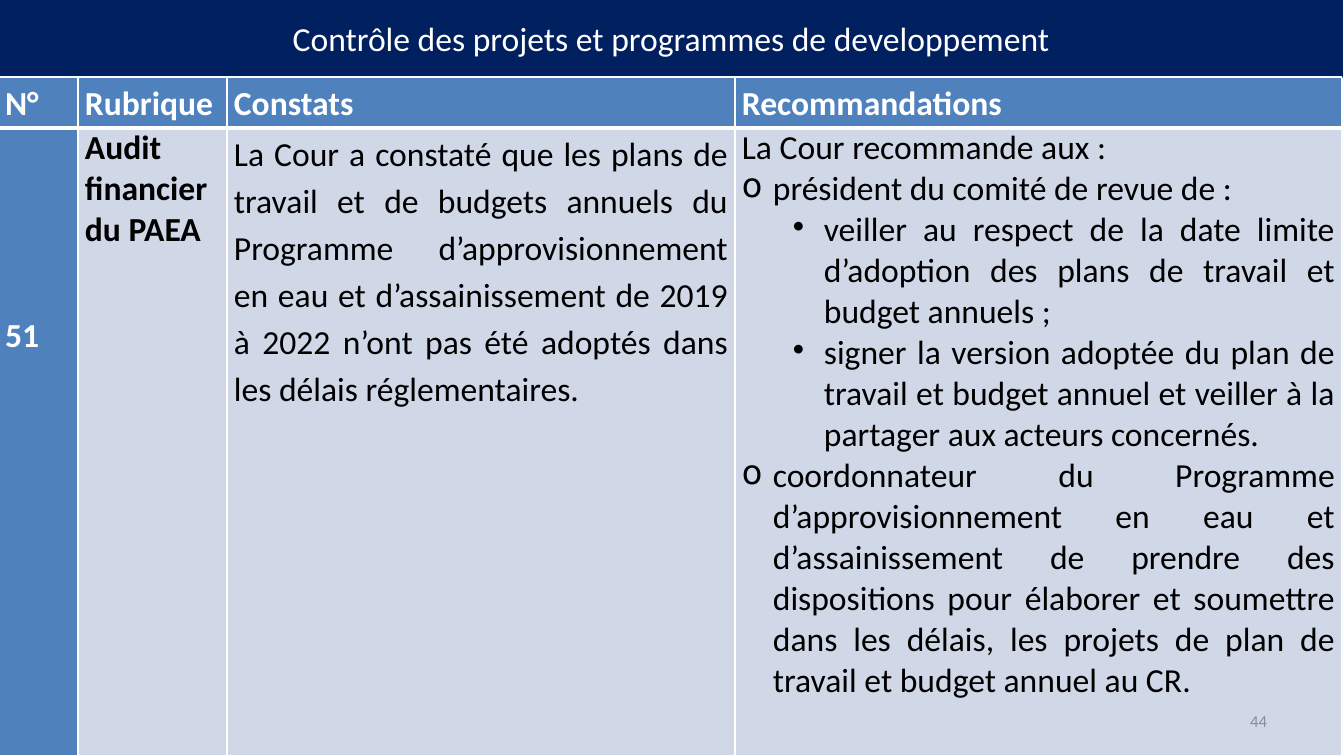
from lxml.etree import SubElement
from pptx import Presentation
from pptx.dml.color import RGBColor
from pptx.enum.text import MSO_ANCHOR as Anchor, MSO_AUTO_SIZE as AutoSize, PP_ALIGN as Align
from pptx.oxml import parse_xml
from pptx.oxml.ns import nsdecls, qn
from pptx.util import Pt

PX = 914400 / 100.8
NAVY, BLUE, PALE, WHITE, BLACK, GREY = "002060", "4F81BD", "D0D8E8", "FFFFFF", "000000", "8C8C8C"

COLUMN_WIDTHS = [80, 149, 508, 607]
ROW_HEIGHTS = [51, 628]
HEADINGS = ["N°", "Rubrique", "Constats", "Recommandations"]
FINDING = (
    "La Cour a constaté que les plans de travail et de budgets annuels du Programme "
    "d’approvisionnement en eau et d’assainissement de 2019 à 2022 n’ont pas été adoptés "
    "dans les délais réglementaires."
)
# Each entry: text, bullet, left indent in px
RECOMMENDATIONS = [
    ("La Cour recommande aux :", None, 0),
    ("président du comité de revue de :", "o", 31),
    ("veiller au respect de la date limite d’adoption des plans de travail et budget annuels ;", "•", 82),
    ("signer la version adoptée du plan de travail et budget annuel et veiller à la partager "
     "aux acteurs concernés.", "•", 82),
    ("coordonnateur du Programme d’approvisionnement en eau et d’assainissement de prendre des "
     "dispositions pour élaborer et soumettre dans les délais, les projets de plan de travail "
     "et budget annuel au CR.", "o", 31),
]


def px(length):
    return round(length * PX)


def color(value):
    return RGBColor.from_string(value)


def assign(target, values):
    for name, value in values.items():
        setattr(target, name, value)


def place(shape, left, top, width, height):
    assign(shape, {"left": px(left), "top": px(top), "width": px(width), "height": px(height)})


class SlideBuilder:
    """Holds the text style and the slide being filled."""

    font = "Calibri"
    bullet_hang = 31

    def __init__(self, presentation):
        self.slide = presentation.slides.add_slide(presentation.slide_layouts[5])

    def add_words(self, paragraph, text, ink, size=24, bold=False, align=Align.JUSTIFY, spacing=1.0):
        assign(paragraph, {"alignment": align, "line_spacing": spacing})
        run = paragraph.add_run()
        run.text = text
        assign(run.font, {"name": self.font, "size": Pt(size), "bold": bold})
        run.font.color.rgb = color(ink)

    def bullet(self, paragraph, symbol, indent):
        properties = paragraph._p.get_or_add_pPr()
        properties.set("marL", str(px(indent)))
        properties.set("indent", str(-px(self.bullet_hang)))
        SubElement(properties, qn("a:buChar")).set("char", symbol)

    def title(self, text, box):
        title = self.slide.shapes.title
        place(title, *box)
        title.fill.solid()
        title.fill.fore_color.rgb = color(NAVY)
        title.line.color.rgb = color(NAVY)
        title.line.width = Pt(2)
        assign(title.text_frame, {"vertical_anchor": Anchor.MIDDLE, "auto_size": AutoSize.NONE})
        self.add_words(title.text_frame.paragraphs[0], text, WHITE, align=Align.CENTER)

    def text(self, text, box, ink, size, align):
        text_box = self.slide.shapes.add_textbox(*map(px, box))
        assign(text_box.text_frame, {"word_wrap": True, "vertical_anchor": Anchor.MIDDLE})
        self.add_words(text_box.text_frame.paragraphs[0], text, ink, size, align=align)

    def table(self, left, top, widths, heights):
        box = map(px, (left, top, sum(widths), sum(heights)))
        table = self.slide.shapes.add_table(len(heights), len(widths), *box).table
        assign(table, {"first_row": False, "horz_banding": False})
        for column, width in zip(table.columns, widths):
            column.width = px(width)
        for row, height in zip(table.rows, heights):
            row.height = px(height)
        return table

    def cell(self, cell, fill, borders, top_margin=0):
        """Set fill, margins and white borders; borders maps a side to its width in points."""
        cell.fill.solid()
        cell.fill.fore_color.rgb = color(fill)
        assign(cell, {"margin_left": px(7), "margin_right": px(7),
                      "margin_top": px(top_margin), "margin_bottom": 0})
        properties = cell._tc.get_or_add_tcPr()
        for position, side in enumerate("LRTB"):
            properties.insert(position, parse_xml(
                f'<a:ln{side} {nsdecls("a")} w="{Pt(borders.get(side, 1))}">'
                f'<a:solidFill><a:srgbClr val="{WHITE}"/></a:solidFill></a:ln{side}>'))
        return cell.text_frame


def main():
    presentation = Presentation()
    assign(presentation, {"slide_width": px(1344), "slide_height": px(756)})
    builder = SlideBuilder(presentation)
    builder.title("Contrôle des projets et programmes de developpement", (0, 0, 1342, 77))

    table = builder.table(-2, 77, COLUMN_WIDTHS, ROW_HEIGHTS)
    for column, heading in enumerate(HEADINGS):
        frame = builder.cell(table.cell(0, column), BLUE, {"B": 3})
        builder.add_words(frame.paragraphs[0], heading, WHITE, bold=True, spacing=1.15)

    body = [
        ("51", BLUE, {"ink": WHITE, "bold": True, "spacing": 1.15}, 182),
        ("Audit financier du PAEA", PALE, {"ink": BLACK, "bold": True}, 0),
        (FINDING, PALE, {"ink": BLACK, "spacing": 1.15}, 0),
    ]
    for column, (text, fill, style, top_margin) in enumerate(body):
        frame = builder.cell(table.cell(1, column), fill, {"T": 3}, top_margin)
        builder.add_words(frame.paragraphs[0], text, **style)

    frame = builder.cell(table.cell(1, 3), PALE, {"T": 3})
    for index, (text, symbol, indent) in enumerate(RECOMMENDATIONS):
        paragraph = frame.add_paragraph() if index else frame.paragraphs[0]
        builder.add_words(paragraph, text, BLACK)
        if symbol:
            builder.bullet(paragraph, symbol, indent)

    builder.text("44", (964, 701, 313, 40), GREY, 12, Align.RIGHT)
    presentation.save("out.pptx")


if __name__ == "__main__":
    main()
